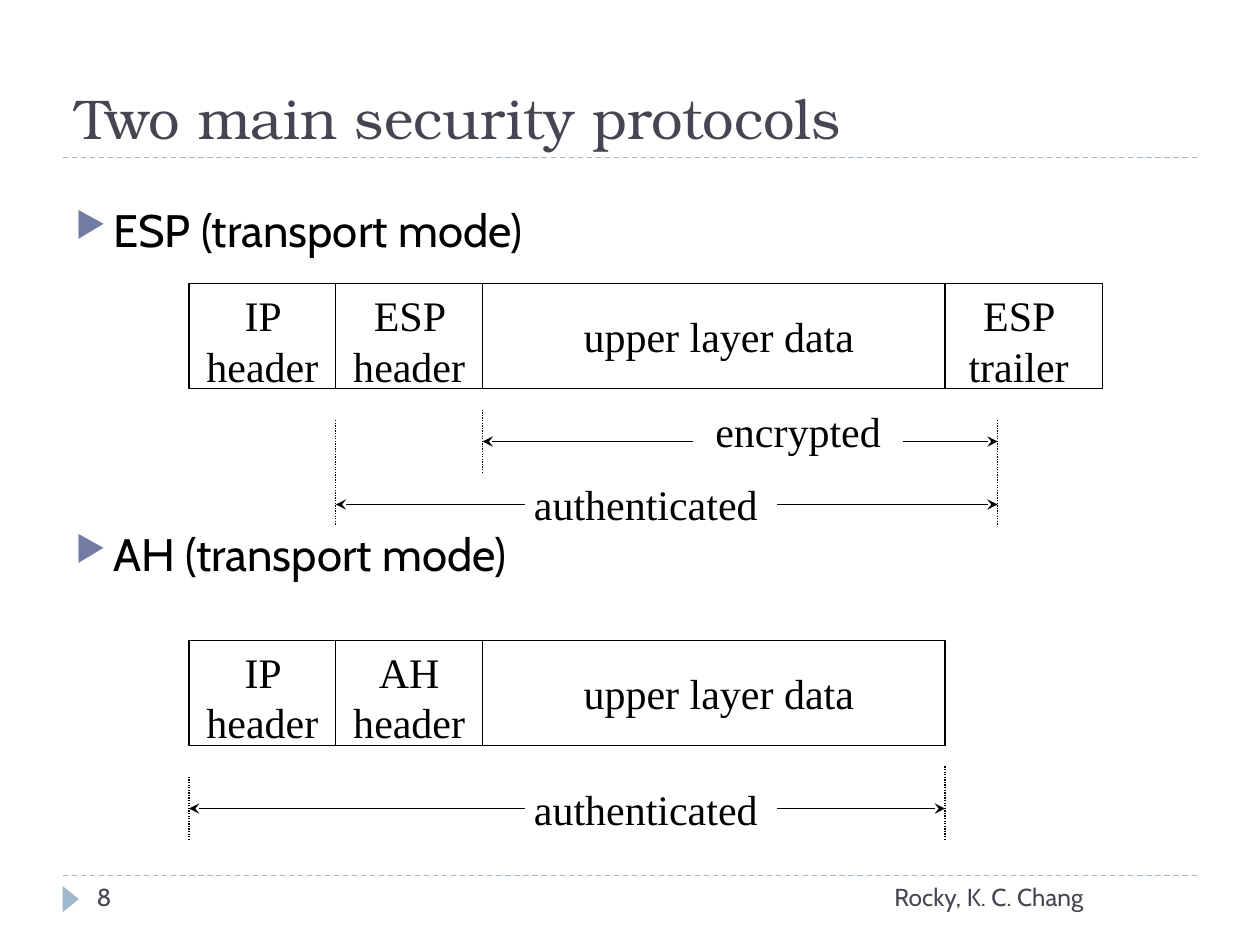
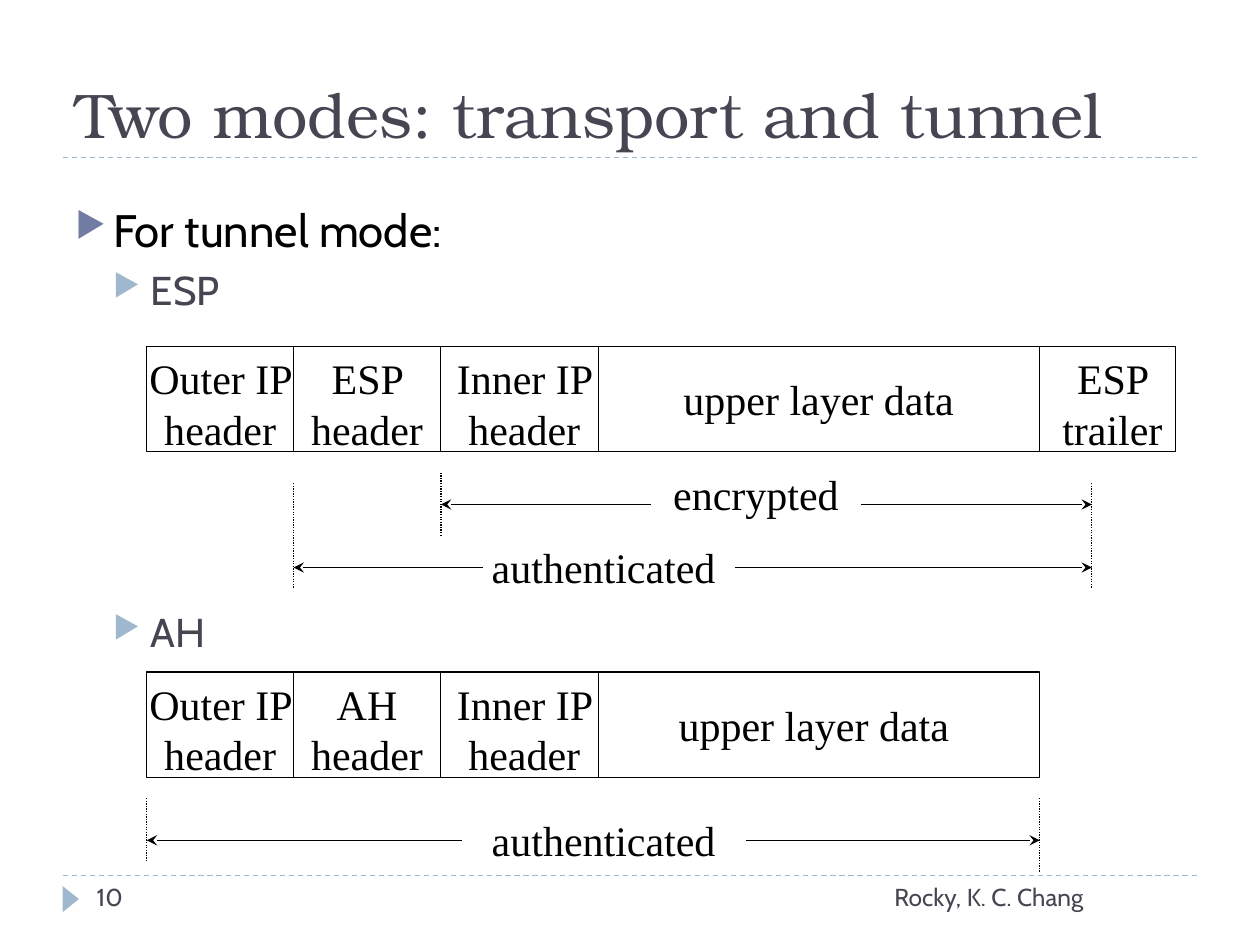
from dataclasses import dataclass
from itertools import accumulate, pairwise

from lxml import etree
from pptx import Presentation
from pptx.dml.color import RGBColor
from pptx.enum import dml, shapes, text
from pptx.oxml import ns
from pptx.util import Cm, Pt


@dataclass(frozen=True)
class Theme:
    ink: str = "000000"
    slate: str = "464653"
    violet: str = "727CA3"
    sky: str = "9FB8CD"
    title_font: str = "TeX Gyre Bonum"
    body_font: str = "Cabin"
    label_font: str = "Times New Roman"
    label_size: int = 24
    footer_size: int = 14
    line_width: float = 0.75


THEME = Theme()
FOOTER = "Rocky, K. C. Chang"
BULLET_STYLES = [  # by level: size, text colour, bullet colour
    (26, THEME.ink, THEME.violet),
    (23, THEME.slate, THEME.sky),
]
BULLET_INDENT = 0.76
BAR_HEIGHT = 2.12
# Label width and drop below the top of the bar, in cm
LABEL_BOXES = {"narrow": (2.96, 0), "wide": (3.81, 0), "data": (7.83, 0.42)}
SPAN_WIDTHS = {"encrypted": 4.24, "authenticated": 6.14}

# Lengths in cm. A field: text, label kind, cell width, label shift.
# A span: text, arrow drop, label drop, label left, arrow ends, gap between arrows.
# A guide: x, drop of its top, drop of its end. Drops count from the bar's top.
SLIDES = [
    {
        "title": "Two main security protocols", "title_size": 32, "number": "8",
        "bullets": [("ESP (transport mode)", 0, 6), ("AH (transport mode)", 0, 154)],
        "packets": [
            {
                "left": 3.81, "top": 5.72,
                "fields": [("IP header", "narrow", 2.96, 0), ("ESP header", "narrow", 2.96, 0),
                           ("upper layer data", "data", 9.32, 0.1),
                           ("ESP trailer", "narrow", 3.17, -0.1)],
                "spans": [("encrypted", 3.18, 2.33, 13.97, (9.73, 20.11), (13.97, 18.2)),
                          ("authenticated", 4.45, 3.81, 9.95, (6.77, 20.11), (10.58, 15.66))],
                "guides": [(6.77, 2.75, 4.87), (9.73, 2.54, 3.81), (20.11, 2.75, 4.87)],
            },
            {
                "left": 3.81, "top": 12.91,
                "fields": [("IP header", "narrow", 2.96, 0), ("AH header", "narrow", 2.96, 0),
                           ("upper layer data", "data", 9.32, 0.1)],
                "spans": [("authenticated", 3.39, 2.75, 9.95, (3.81, 19.05), (10.58, 15.66))],
                "guides": [(3.81, 2.75, 4.02), (19.05, 2.54, 4.02)],
            },
        ],
    },
    {
        "title": "Two modes: transport and tunnel", "title_size": 36, "number": "10",
        "bullets": [("For tunnel mode:", 0, 6), ("ESP", 1, 5), ("AH", 1, 168)],
        "packets": [
            {
                "left": 2.96, "top": 6.99,
                "fields": [("Outer IP header", "wide", 2.96, 0), ("ESP header", "narrow", 2.96, 0),
                           ("Inner IP header", "wide", 3.18, 0.1),
                           ("upper layer data", "data", 8.89, 0),
                           ("ESP trailer", "narrow", 2.75, 0.1)],
                "spans": [("encrypted", 3.18, 2.33, 13.12, (8.89, 22.01), (13.12, 17.36)),
                          ("authenticated", 4.45, 3.81, 9.1, (5.92, 22.01), (9.74, 14.82))],
                "guides": [(5.92, 2.75, 4.87), (8.89, 2.54, 3.81), (22.01, 2.75, 4.87)],
            },
            {
                "left": 2.96, "top": 13.55,
                "fields": [("Outer IP header", "wide", 2.96, 0), ("AH header", "narrow", 2.96, 0),
                           ("Inner IP header", "wide", 3.18, 0.1),
                           ("upper layer data", "data", 8.89, -0.1)],
                "spans": [("authenticated", 3.39, 2.75, 9.1, (2.96, 20.96), (9.31, 15.03))],
                "guides": [(2.96, 2.54, 3.81), (20.96, 2.54, 4.02)],
            },
        ],
    },
]


def add_xml(parent, tag, **attributes):
    return etree.SubElement(parent, ns.qn(tag), attributes)


def write(para, words, font, size, colour):
    span = para.add_run()
    span.text = words
    for name, value in {"name": font, "size": Pt(size)}.items():
        setattr(span.font, name, value)
    span.font.color.rgb = RGBColor.from_string(colour)


def add_box(page, left, top, width, height):
    box = page.shapes.add_textbox(Cm(left), Cm(top), Cm(width), Cm(height))
    box.text_frame.word_wrap = True
    return box


def add_line(page, start, end, colour=THEME.ink, dash=None, arrow=False):
    line = page.shapes.add_connector(
        shapes.MSO_CONNECTOR.STRAIGHT, *(Cm(value) for value in (*start, *end)))
    line.line.color.rgb = RGBColor.from_string(colour)
    line.line.width = Pt(THEME.line_width)
    if dash:
        line.line.dash_style = dash
    if arrow:
        add_xml(line.line._get_or_add_ln(), "a:tailEnd", type="stealth")
    add_xml(line._element.spPr, "a:effectLst")


def add_frame(page, content):
    """Title, dashed rules, footer marker, page number and author."""
    title = page.shapes.title
    place = {"left": Cm(1.27), "top": Cm(0.43), "width": Cm(22.86), "height": Cm(2.74)}
    for name, value in place.items():
        setattr(title, name, value)
    frame = title.text_frame
    layout = {"vertical_anchor": text.MSO_ANCHOR.BOTTOM, "word_wrap": True,
              "auto_size": text.MSO_AUTO_SIZE.NONE}
    for name, value in layout.items():
        setattr(frame, name, value)
    para = frame.paragraphs[0]
    para.alignment = text.PP_ALIGN.LEFT
    write(para, content["title"], THEME.title_font, content["title_size"], THEME.slate)

    for y in (3.18, 17.65):
        add_line(page, (1.27, y), (24.13, y), THEME.sky, dml.MSO_LINE.DASH)
    marker = page.shapes.add_shape(shapes.MSO_SHAPE.ISOSCELES_TRIANGLE,
                                   Cm(1.16), Cm(17.96), Cm(0.53), Cm(0.33))
    marker.rotation = 90
    marker.shadow.inherit = False
    marker.fill.solid()
    marker.fill.fore_color.rgb = RGBColor.from_string(THEME.sky)
    marker.line.fill.background()
    for words, left, width in ((FOOTER, 17.78, 6.35), (content["number"], 1.7, 5.51)):
        box = add_box(page, left, 17.65, width, 1.02)
        write(box.text_frame.paragraphs[0], words, THEME.body_font,
              THEME.footer_size, THEME.slate)


def add_bullets(page, bullets):
    frame = add_box(page, 1.27, 3.94, 22.86, 13.08).text_frame
    for index, (words, level, space) in enumerate(bullets):
        para = frame.add_paragraph() if index else frame.paragraphs[0]
        size, colour, bullet_colour = BULLET_STYLES[level]
        para.level = level
        para.space_before = Pt(space)
        properties = para._p.get_or_add_pPr()
        properties.set("marL", str(Cm(BULLET_INDENT * (level + 1))))
        properties.set("indent", str(-Cm(BULLET_INDENT)))
        add_xml(add_xml(properties, "a:buClr"), "a:srgbClr", val=bullet_colour)
        add_xml(properties, "a:buSzPct", val="76000")
        add_xml(properties, "a:buChar", char="▶")
        write(para, words, THEME.body_font, size, colour)


def add_label(page, words, left, top, width, height):
    frame = add_box(page, left, top, width, height).text_frame
    frame.auto_size = text.MSO_AUTO_SIZE.SHAPE_TO_FIT_TEXT
    para = frame.paragraphs[0]
    para.alignment = text.PP_ALIGN.CENTER
    before = add_xml(para._p.get_or_add_pPr(), "a:spcBef")
    add_xml(before, "a:spcPct", val="50000")
    write(para, words, THEME.label_font, THEME.label_size, THEME.ink)


def add_packet(page, packet):
    """A bar of header fields with the protected spans marked below it."""
    top, fields = packet["top"], packet["fields"]
    edges = list(accumulate((field[2] for field in fields), initial=packet["left"]))
    bar = page.shapes.add_shape(shapes.MSO_SHAPE.RECTANGLE, Cm(edges[0]), Cm(top),
                                Cm(edges[-1] - edges[0]), Cm(BAR_HEIGHT))
    bar.shadow.inherit = False
    bar.fill.background()
    bar.line.color.rgb = RGBColor.from_string(THEME.ink)
    bar.line.width = Pt(THEME.line_width)
    for x in edges[1:-1]:
        add_line(page, (x, top), (x, top + BAR_HEIGHT))
    for (words, kind, _, shift), (left, right) in zip(fields, pairwise(edges)):
        width, drop = LABEL_BOXES[kind]
        add_label(page, words, (left + right - width) / 2 + shift, top + drop,
                  width, 1.27 if kind == "data" else 2.29)

    for words, arrow_drop, label_drop, label_left, ends, gap in packet["spans"]:
        add_label(page, words, label_left, top + label_drop, SPAN_WIDTHS[words], 1.27)
        for start, end in zip(gap, ends):
            add_line(page, (start, top + arrow_drop), (end, top + arrow_drop), arrow=True)
    for x, first, last in packet["guides"]:
        add_line(page, (x, top + first), (x, top + last), dash=dml.MSO_LINE.ROUND_DOT)


def main():
    deck = Presentation()
    deck.slide_width, deck.slide_height = Cm(25.4), Cm(19.05)
    title_only = deck.slide_layouts[5]
    for content in SLIDES:
        page = deck.slides.add_slide(title_only)
        add_frame(page, content)
        add_bullets(page, content["bullets"])
        for packet in content["packets"]:
            add_packet(page, packet)
    deck.save("out.pptx")


if __name__ == "__main__":
    main()
